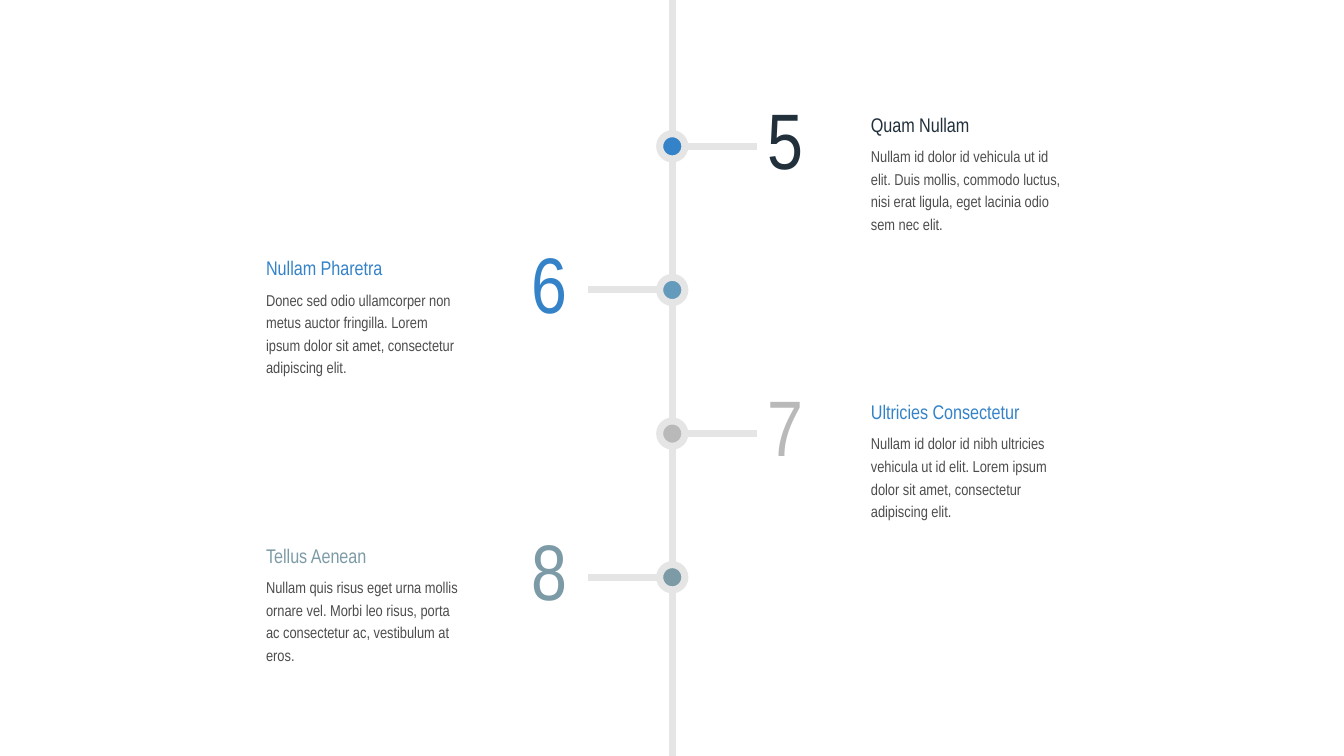
from lxml import etree
from pptx import Presentation
from pptx.dml.color import RGBColor
from pptx.enum import shapes, text
from pptx.oxml import ns
from pptx.util import Pt

FONT = "Arial Narrow"
NAVY = RGBColor(0x22, 0x30, 0x3C)
BLUE = RGBColor(0x34, 0x83, 0xC9)
SKY = RGBColor(0x64, 0x9A, 0xBC)
SILVER = RGBColor(0xB9, 0xB9, 0xB9)
SLATE = RGBColor(0x7C, 0x9B, 0xA6)
BODY_GREY = RGBColor(0x4D, 0x4D, 0x4D)
TRACK_GREY = RGBColor(0xE5, 0xE5, 0xE5)

SPINE_X = 480.2
FIRST_Y = 104.5
STEP = 102.6
TRACK_WIDTH = 5
DOT = 18

# number, heading, body, number colour, heading colour, dot colour
milestones = [
    ("5", "Quam Nullam",
     "Nullam id dolor id vehicula ut id elit. Duis mollis, commodo luctus, "
     "nisi erat ligula, eget lacinia odio sem nec elit.",
     NAVY, NAVY, BLUE),
    ("6", "Nullam Pharetra",
     "Donec sed odio ullamcorper non metus auctor fringilla. Lorem ipsum "
     "dolor sit amet, consectetur adipiscing elit.",
     BLUE, BLUE, SKY),
    ("7", "Ultricies Consectetur",
     "Nullam id dolor id nibh ultricies vehicula ut id elit. Lorem ipsum "
     "dolor sit amet, consectetur adipiscing elit.",
     SILVER, BLUE, SILVER),
    ("8", "Tellus Aenean",
     "Nullam quis risus eget urna mollis ornare vel. Morbi leo risus, porta "
     "ac consectetur ac, vestibulum at eros.",
     SLATE, SLATE, SLATE),
]

prs = Presentation()
prs.slide_width = Pt(960)
prs.slide_height = Pt(540)
slide = prs.slides.add_slide(prs.slide_layouts[6])


def add_text(content, left, top, width, height, *, size, color,
             anchor=text.MSO_ANCHOR.TOP, align=text.PP_ALIGN.LEFT,
             spacing=1.0, before=0):
    box = slide.shapes.add_textbox(Pt(left), Pt(top), Pt(width), Pt(height))
    frame = box.text_frame
    frame.word_wrap = True
    frame.vertical_anchor = anchor
    frame.margin_left = frame.margin_right = 0
    frame.margin_top = frame.margin_bottom = 0
    paragraph = frame.paragraphs[0]
    paragraph.alignment = align
    paragraph.line_spacing = spacing
    paragraph.space_before = Pt(before)
    run = paragraph.add_run()
    run.text = content
    run.font.name = FONT
    run.font.size = Pt(size)
    run.font.color.rgb = color


def add_track(x1, y1, x2, y2):
    track = slide.shapes.add_connector(
        shapes.MSO_CONNECTOR.STRAIGHT, Pt(x1), Pt(y1), Pt(x2), Pt(y2))
    track.line.color.rgb = TRACK_GREY
    track.line.width = Pt(TRACK_WIDTH)
    etree.SubElement(track._element.spPr, ns.qn("a:effectLst"))


add_track(SPINE_X, 0, SPINE_X, 540)

for i, (number, heading, body, number_color, heading_color, dot_color) in enumerate(milestones):
    y = FIRST_Y + i * STEP
    on_right = i % 2 == 0
    if on_right:
        text_left, number_left, direction = 622.1, 547.9, 1
        number_align = text.PP_ALIGN.LEFT
    else:
        text_left, number_left, direction = 190.1, 342, -1
        number_align = text.PP_ALIGN.RIGHT

    add_track(SPINE_X + direction * DOT / 2, y, SPINE_X + direction * 60.5, y)

    dot = slide.shapes.add_shape(
        shapes.MSO_SHAPE.OVAL, Pt(SPINE_X - DOT / 2), Pt(y - DOT / 2), Pt(DOT), Pt(DOT))
    dot.shadow.inherit = False
    dot.fill.solid()
    dot.fill.fore_color.rgb = dot_color
    dot.line.color.rgb = TRACK_GREY
    dot.line.width = Pt(TRACK_WIDTH)

    add_text(number, number_left, y - 34, 63.4, 56.2, size=56.2, color=number_color,
             anchor=text.MSO_ANCHOR.MIDDLE, align=number_align)
    add_text(heading, text_left, y - 24.6, 140.4, 17.3, size=14.1, color=heading_color,
             anchor=text.MSO_ANCHOR.BOTTOM, spacing=1.1, before=30)
    add_text(body, text_left, y - 2.1, 140.4, 59.8, size=11.2, color=BODY_GREY,
             spacing=1.2, before=10)

prs.save("out.pptx")
